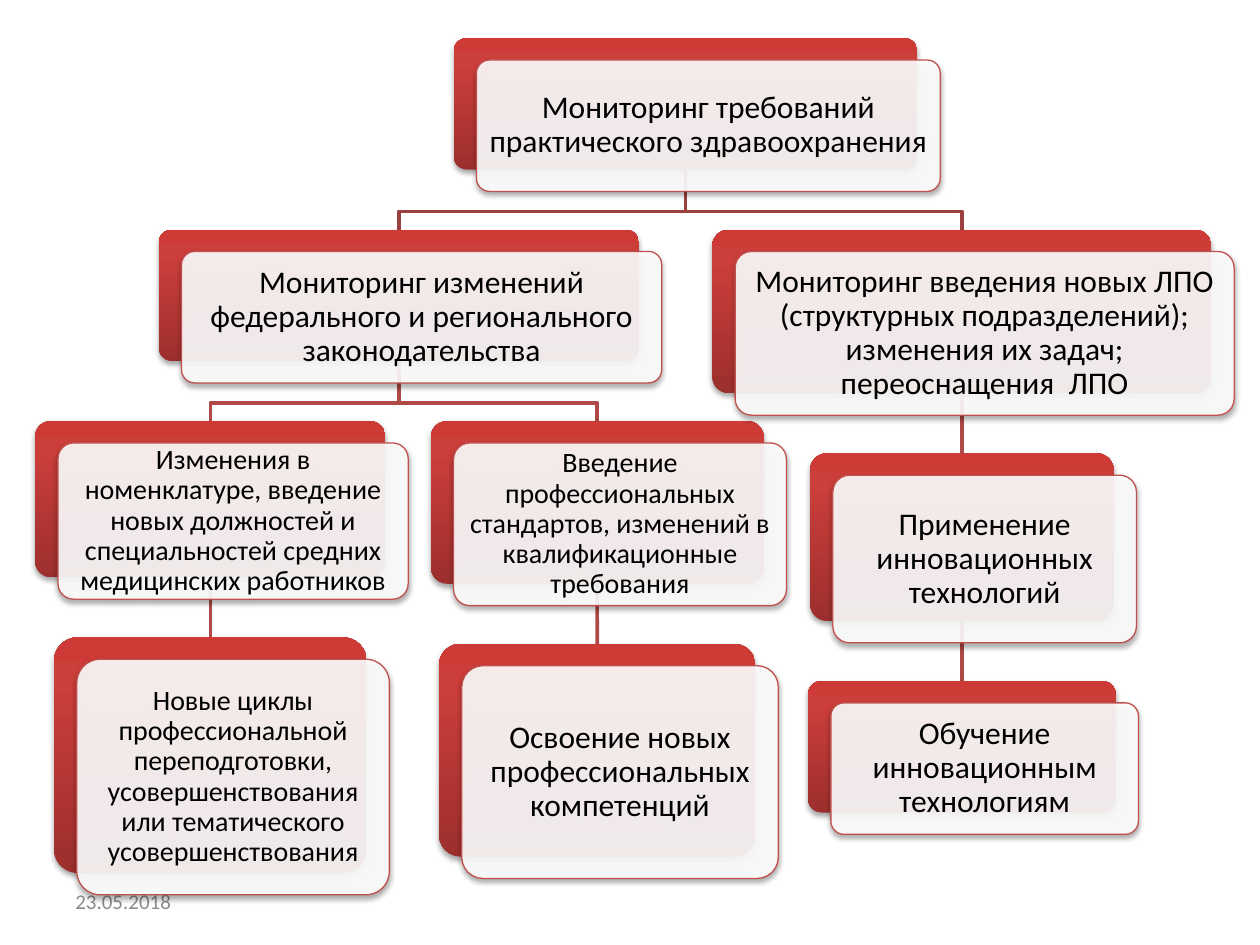
import copy

import lxml.etree
import pptx
import pptx.dml.color
import pptx.enum.shapes
import pptx.enum.text
import pptx.oxml.ns
import pptx.util

Cm = pptx.util.Cm
Pt = pptx.util.Pt
RGB = pptx.dml.color.RGBColor
ALIGN = pptx.enum.text.PP_ALIGN
ROUND = pptx.enum.shapes.MSO_SHAPE.ROUNDED_RECTANGLE
STRAIGHT = pptx.enum.shapes.MSO_CONNECTOR.STRAIGHT

BLACK = RGB(0x00, 0x00, 0x00)
GREY = RGB(0x8C, 0x8C, 0x8C)
WHITE = RGB(0xFF, 0xFF, 0xFF)
EDGE = RGB(0xC0, 0x50, 0x4D)
LINKS = [RGB(0x9A, 0x40, 0x3E), RGB(0xAE, 0x49, 0x46)]
REDS = [(0, RGB(0x9C, 0x2F, 0x2D)), (0.8, RGB(0xCB, 0x3E, 0x3A)),
        (1, RGB(0xCE, 0x3B, 0x37))]

SHIFT = 0.46  # card against its red plate, in cm
GAP = 1.21    # from one level to the next
BEND = 0.84   # from a plate down to the turn of its links

# Each node: text, centre, width, height, text size, children
TREE = ("Мониторинг требований практического здравоохранения",
        13.82, 9.35, 2.65, 18, [
    ("Мониторинг изменений федерального и регионального законодательства",
     8.04, 9.68, 2.65, 18, [
        ("Изменения в номенклатуре, введение новых должностей и "
         "специальностей средних медицинских работников",
         4.24, 7.06, 3.15, 16, [
            ("Новые циклы профессиональной переподготовки, "
             "усовершенствования или тематического усовершенствования",
             4.24, 6.3, 4.75, 16, [])]),
        ("Введение профессиональных стандартов, изменений в "
         "квалификационные требования",
         12.04, 6.71, 3.28, 16, [
            ("Освоение новых профессиональных компетенций",
             12.04, 6.38, 4.29, 18, [])])]),
    ("Мониторинг введения новых ЛПО (структурных подразделений); "
     "изменения их задач; переоснащения  ЛПО",
     19.39, 10.06, 3.3, 18, [
        ("Применение инновационных технологий",
         19.39, 6.12, 3.38, 18, [
            ("Обучение инновационным технологиям",
             19.39, 6.2, 2.65, 18, [])])])])


def add_xml(parent, tag, **attrs):
    node = lxml.etree.SubElement(parent, pptx.oxml.ns.qn(tag))
    for key, value in attrs.items():
        node.set(key, str(value))
    return node


def write(shape, text, size, color=BLACK, align=ALIGN.CENTER, inset=0.17,
          spacing=0.9):
    frame = shape.text_frame
    frame.word_wrap = True
    frame.vertical_anchor = pptx.enum.text.MSO_ANCHOR.MIDDLE
    frame.margin_left = frame.margin_right = Cm(inset)
    frame.margin_top = frame.margin_bottom = Cm(0.17)
    par = frame.paragraphs[0]
    par.alignment = align
    par.line_spacing = spacing
    run = par.add_run()
    run.text = text
    run.font.name = "Calibri"
    run.font.size = Pt(size)
    run.font.color.rgb = color


def add_panel(slide, left, top, width, height):
    """Add a rounded box with a soft shadow below it."""
    panel = slide.shapes.add_shape(ROUND, Cm(left), Cm(top), Cm(width),
                                   Cm(height))
    panel.adjustments[0] = 0.1
    panel.shadow.inherit = False
    effects = panel._element.spPr.find(pptx.oxml.ns.qn("a:effectLst"))
    shadow = add_xml(effects, "a:outerShdw", blurRad=Pt(3.1), dist=Pt(1.8),
                     dir=5400000, rotWithShape=0)
    tint = add_xml(shadow, "a:srgbClr", val="000000")
    add_xml(tint, "a:alpha", val=35000)
    return panel


def paint_red(plate):
    plate.line.fill.background()
    plate.fill.gradient()
    plate.fill.gradient_angle = 90
    stops = plate._element.spPr.find(".//" + pptx.oxml.ns.qn("a:gsLst"))
    stops.append(copy.deepcopy(stops[-1]))
    for stop, (place, color) in zip(plate.fill.gradient_stops, REDS):
        stop.position = place
        stop.color.rgb = color


def paint_glass(card):
    card.fill.solid()
    card.fill.fore_color.rgb = WHITE
    tint = card._element.spPr.find(
        pptx.oxml.ns.qn("a:solidFill") + "/" + pptx.oxml.ns.qn("a:srgbClr"))
    add_xml(tint, "a:alpha", val=90000)
    card.line.color.rgb = EDGE
    card.line.width = Pt(0.75)


def add_link(slide, upper, lower, color):
    """Join two plates, behind all the boxes."""
    start = upper.left + upper.width // 2, upper.top + upper.height
    end = lower.left + lower.width // 2, lower.top
    if abs(start[0] - end[0]) < Cm(0.02):
        link = slide.shapes.add_connector(STRAIGHT, *start, *end)
        link.begin_connect(upper, 2)
        link.end_connect(lower, 0)
        add_xml(link._element.spPr, "a:effectLst")
    else:
        turn = start[1] + Cm(BEND)
        outline = slide.shapes.build_freeform(*start)
        outline.add_line_segments(
            [(start[0], turn), (end[0], turn), end], close=False)
        link = outline.convert_to_shape()
        link.fill.background()
        link.shadow.inherit = False
    link.line.color.rgb = color
    link.line.width = Pt(2)
    slide.shapes._spTree.insert(2, link._element)


def add_node(slide, node, top, level=0):
    """Add a node with all below it, and return its plate."""
    text, centre, width, height, size, below = node
    left = centre - width / 2
    plate = add_panel(slide, left, top, width, height)
    paint_red(plate)
    card = add_panel(slide, left + SHIFT, top + SHIFT - 0.02, width, height)
    paint_glass(card)
    write(card, text, size)
    for child in below:
        lower = add_node(slide, child, top + height + GAP, level + 1)
        add_link(slide, plate, lower, LINKS[min(level, 1)])
    return plate


def main():
    deck = pptx.Presentation()
    deck.slide_width = Cm(25.4)
    deck.slide_height = Cm(19.05)
    slide = deck.slides.add_slide(deck.slide_layouts[6])
    date = slide.shapes.add_textbox(Cm(1.27), Cm(17.66), Cm(5.93), Cm(1.01))
    write(date, "23.05.2018", 12, color=GREY, align=ALIGN.LEFT, inset=0.25,
          spacing=1.0)
    add_node(slide, TREE, 0.77)
    deck.save("out.pptx")


if __name__ == "__main__":
    main()
